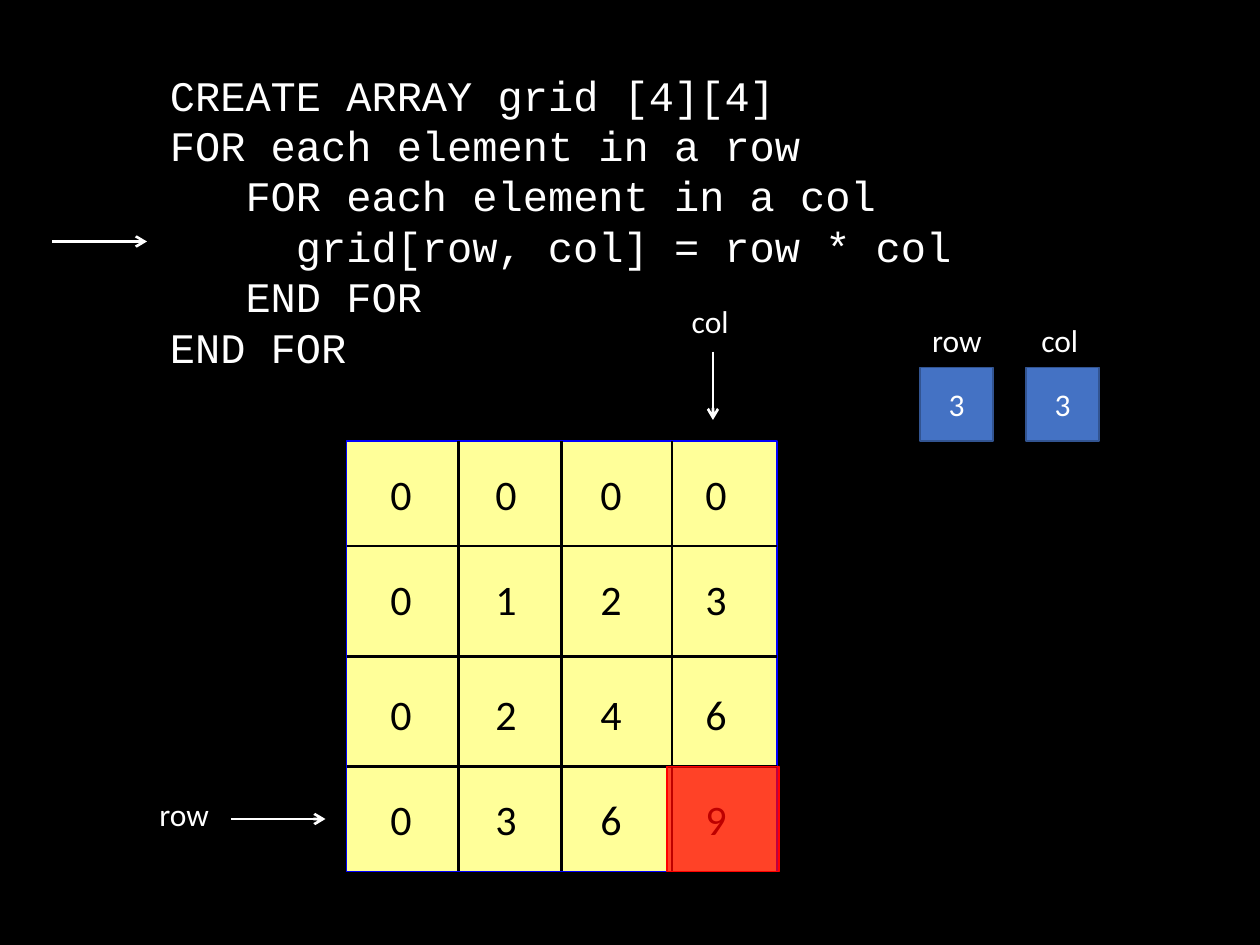
"""Build a slide that traces a nested loop filling a 4 by 4 grid."""
from dataclasses import dataclass
from typing import Optional

from lxml import etree
from pptx import Presentation
from pptx.dml.color import RGBColor
from pptx.enum.shapes import MSO_CONNECTOR, MSO_SHAPE
from pptx.enum.text import MSO_ANCHOR, MSO_AUTO_SIZE, PP_ALIGN
from pptx.oxml.ns import qn
from pptx.util import Inches, Pt

RECT = MSO_SHAPE.RECTANGLE
STRAIGHT = MSO_CONNECTOR.STRAIGHT
MIDDLE = MSO_ANCHOR.MIDDLE
CENTER = PP_ALIGN.CENTER
FIT_SHAPE = MSO_AUTO_SIZE.SHAPE_TO_FIT_TEXT
TOP, LEFT, BOTTOM, RIGHT = range(4)

COLORS = {
    "background": "000000", "ink": "000000", "light": "FFFFFF",
    "grid": "FFFF99", "grid_edge": "0000FF", "current": "FF0000",
    "variable": "4472C4", "variable_edge": "325491",
}
BODY, MONO = "Calibri", "Courier New"
COLUMNS, ROWS = 120, 90
GRID_LEFT, GRID_TOP, GRID_SIZE = 33, 42, 41
DIVIDER_COLUMNS = (43.7, 53.5, 64)
DIVIDER_ROWS = (52, 62.5, 73)
DIGIT_COLUMNS = (36, 46, 56, 66)
DIGIT_ROWS = (44, 54, 65, 75)
CODE = """CREATE ARRAY grid [4][4]
FOR each element in a row
   FOR each element in a col
\t\tgrid[row, col] = row * col
   END FOR
END FOR"""


@dataclass
class Box:
    left: float
    top: float
    width: float
    height: float
    fill: str
    edge: str
    text: str = ""
    alpha: Optional[int] = None


@dataclass
class Line:
    x1: float
    y1: float
    x2: float
    y2: float
    color: str = "light"
    arrow: bool = True


@dataclass
class Label:
    left: float
    top: float
    width: float
    height: float
    text: str
    size: int = 18
    color: str = "light"
    font: str = BODY
    wrap: bool = False


VARIABLES = [
    Box(x, 35, 7, 7, "variable", "variable_edge", "3") for x in (97.7, 87.6)
]
ARROWS = [
    Line(5, 23, 14, 23),
    Line(67.9, 33.5, 67.9, 40),
    Line(22, 78, 31, 78),
]
LABELS = [
    Label(14, 75.1, 7.3, 4.8, "row"),
    Label(64.7, 28.2, 6.2, 4.8, "col"),
    Label(87.6, 30, 7.3, 4.8, "row"),
    Label(98, 30, 7, 4.8, "col"),
]

prs = Presentation()
prs.slide_width, prs.slide_height = Inches(10), Inches(7.5)
slide = prs.slides.add_slide(prs.slide_layouts[6])


def color(name: str) -> RGBColor:
    """Return a named colour."""
    return RGBColor.from_string(COLORS[name])


def cx(columns: float) -> int:
    """Convert grid columns to a length."""
    return int(prs.slide_width * columns / COLUMNS)


def cy(rows: float) -> int:
    """Convert grid rows to a length."""
    return int(prs.slide_height * rows / ROWS)


def set_text(tf, text: str, size: int, name: str, font: str) -> None:
    """Fill a text frame and format its runs."""
    tf.text = text
    for p in tf.paragraphs:
        for r in p.runs:
            r.font.size, r.font.name = Pt(size), font
            r.font.color.rgb = color(name)


def draw_box(box: Box):
    """Draw a rectangle with an optional centred value."""
    sp = slide.shapes.add_shape(
        RECT, cx(box.left), cy(box.top), cx(box.width), cy(box.height))
    sp.shadow.inherit = False
    sp.fill.solid()
    sp.fill.fore_color.rgb = color(box.fill)
    sp.line.color.rgb = color(box.edge)
    sp.line.width = Pt(1)
    if box.alpha is not None:
        rgb = sp.fill._xPr.find(qn("a:solidFill"))[0]
        etree.SubElement(rgb, qn("a:alpha"), val=str(box.alpha * 1000))
    if box.text:
        tf = sp.text_frame
        set_text(tf, box.text, 18, "light", BODY)
        tf.vertical_anchor = MIDDLE
        tf.paragraphs[0].alignment = CENTER
    return sp


def draw_line(line: Line):
    """Draw a straight line with an optional arrowhead."""
    s = slide.shapes.add_connector(
        STRAIGHT, cx(line.x1), cy(line.y1), cx(line.x2), cy(line.y2))
    s.line.color.rgb = color(line.color)
    s.line.width = Pt(1.5)
    if line.arrow:
        etree.SubElement(s.line._get_or_add_ln(), qn("a:tailEnd"), type="arrow")
    etree.SubElement(s._element.spPr, qn("a:effectLst"))
    return s


def draw_label(label: Label):
    """Draw a text box."""
    s = slide.shapes.add_textbox(
        cx(label.left), cy(label.top), cx(label.width), cy(label.height))
    tf = s.text_frame
    tf.word_wrap, tf.auto_size = label.wrap, FIT_SHAPE
    set_text(tf, label.text, label.size, label.color, label.font)
    return s


def draw_grid() -> None:
    """Draw the square, its dividers and the product in each cell."""
    right, bottom = GRID_LEFT + GRID_SIZE, GRID_TOP + GRID_SIZE
    square = draw_box(
        Box(GRID_LEFT, GRID_TOP, GRID_SIZE, GRID_SIZE, "grid", "grid_edge"))
    verticals = [draw_line(Line(x, GRID_TOP, x, bottom, "ink", False))
                 for x in DIVIDER_COLUMNS]
    horizontals = [draw_line(Line(GRID_LEFT, y, right, y, "ink", False))
                   for y in DIVIDER_ROWS]
    for s, start, end in ((verticals[1], TOP, BOTTOM),
                          (horizontals[1], LEFT, RIGHT)):
        s.begin_connect(square, start)
        s.end_connect(square, end)
    for row, y in enumerate(DIGIT_ROWS):
        for col, x in enumerate(DIGIT_COLUMNS):
            draw_label(Label(x, y, 7, 6, str(row * col), 24, "ink", wrap=True))


def main() -> None:
    """Build and save the slide."""
    slide.background.fill.solid()
    slide.background.fill.fore_color.rgb = color("background")
    draw_grid()
    code = draw_label(Label(15, 6, 77.4, 30.2, CODE, 24, font=MONO))
    for p in code.text_frame.paragraphs:
        p._p.get_or_add_pPr().set("defTabSz", str(Inches(0.5)))
    draw_box(Box(63.5, 73, 10.7, 10, "current", "current", alpha=74))
    for arrow in ARROWS:
        draw_line(arrow)
    for box in VARIABLES:
        draw_box(box)
    for label in LABELS:
        draw_label(label)
    prs.save("out.pptx")


if __name__ == "__main__":
    main()
